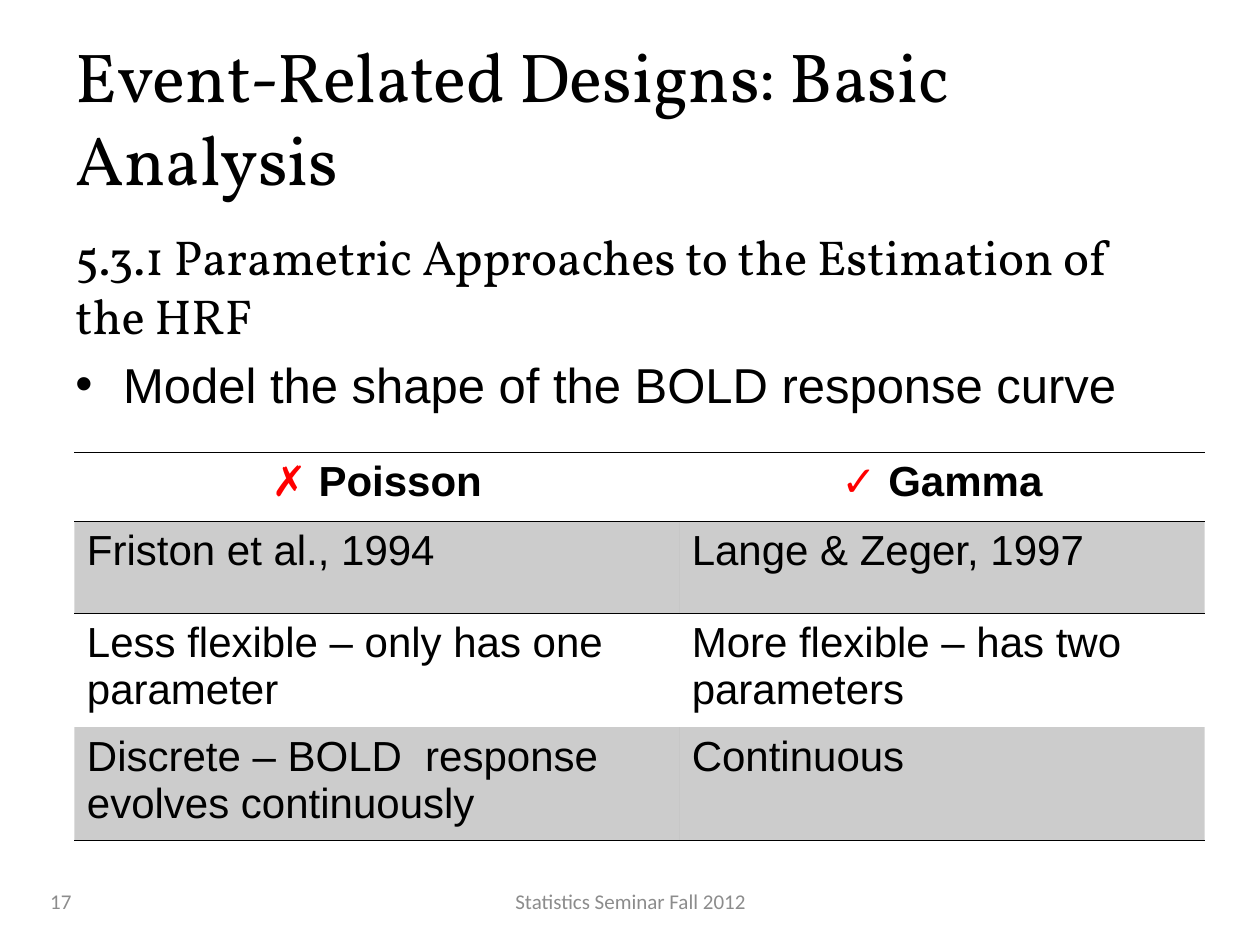
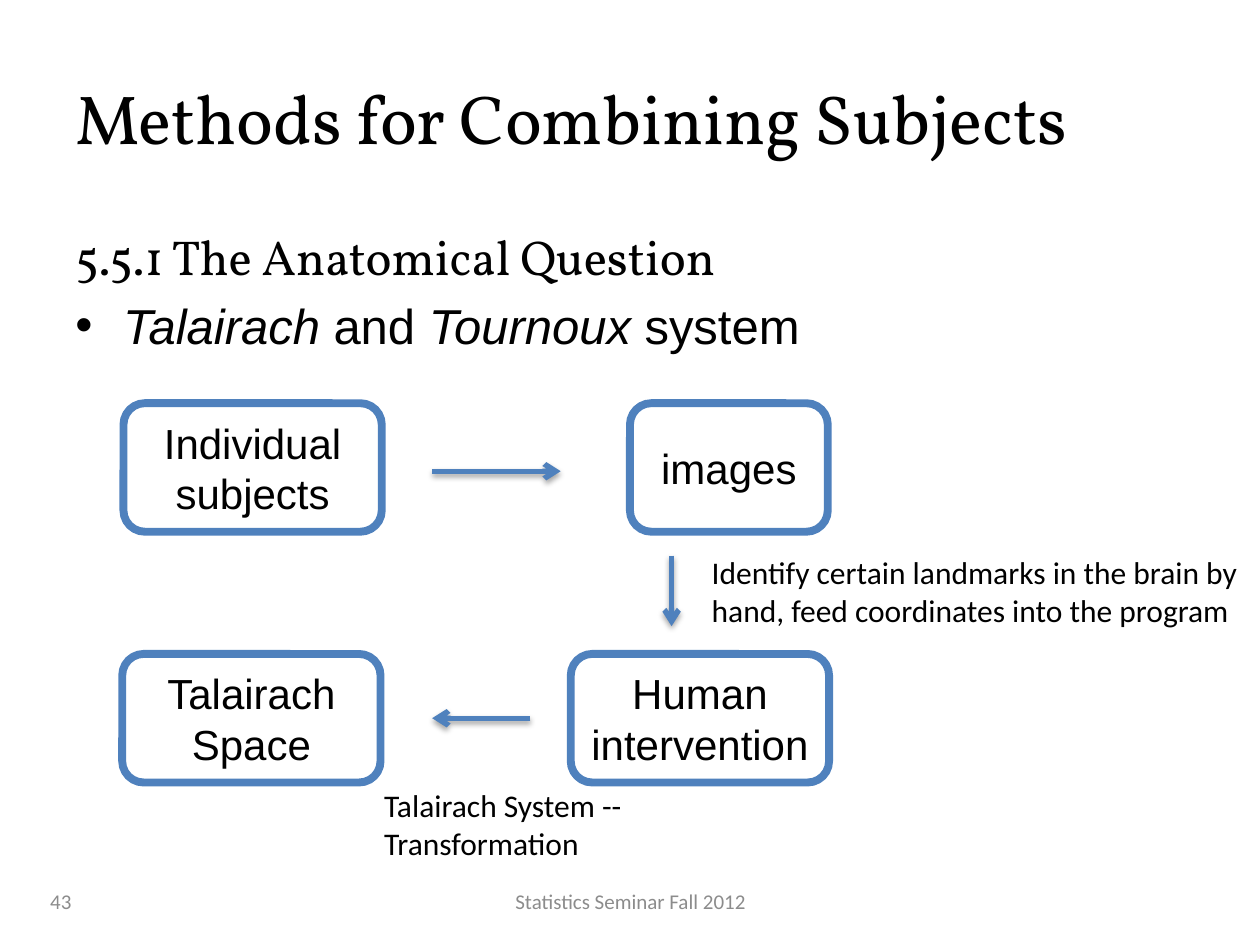
from lxml import etree
from pptx import Presentation
from pptx.dml.color import RGBColor
from pptx.enum.shapes import MSO_CONNECTOR, MSO_SHAPE
from pptx.enum.text import MSO_ANCHOR, PP_ALIGN
from pptx.oxml import parse_xml
from pptx.oxml.ns import nsdecls, qn
from pptx.util import Pt

PX = 9144
LEFT, CENTER = PP_ALIGN.LEFT, PP_ALIGN.CENTER
TOP, MIDDLE = MSO_ANCHOR.TOP, MSO_ANCHOR.MIDDLE
ROUND_RECT = MSO_SHAPE.ROUNDED_RECTANGLE
STRAIGHT = MSO_CONNECTOR.STRAIGHT
COLORS = {"ink": "000000", "paper": "FFFFFF", "footer": "8C8C8C", "mark": "FF0000", "blue": "4F81BD"}
HEADING, BODY, NOTE = "Vollkorn", "Arial", "Calibri"
NO_STYLE = "{2D5ABB26-0587-4C30-8999-92F81FD0307C}"


def add_run(p, text, size, font, color="ink", bold=False, italic=False):
    r = p.add_run()
    r.text = text
    r.font.size = Pt(size)
    r.font.name = font
    r.font.bold = bold
    r.font.italic = italic
    r.font.color.rgb = RGBColor.from_string(COLORS[color])


def add_box(s, box, text, size, font, color="ink", align=LEFT, anchor=TOP):
    tf = s.shapes.add_textbox(*[v * PX for v in box]).text_frame
    tf.word_wrap = True
    tf.vertical_anchor = anchor
    p = tf.paragraphs[0]
    p.alignment = align
    add_run(p, text, size, font, color)
    return tf


prs = Presentation()
prs.slide_width, prs.slide_height = 1000 * PX, 750 * PX

pages = [
    ("17", "Event-Related Designs: Basic Analysis",
     "5.3.1 Parametric Approaches to the Estimation of the HRF",
     [("Model the shape of the BOLD response curve", False)]),
    ("43", "Methods for Combining Subjects", "5.5.1 The Anatomical Question",
     [("Talairach", True), (" and ", False), ("Tournoux", True), (" system", False)]),
]
slides = []
for number, title, section, bullet in pages:
    s = prs.slides.add_slide(prs.slide_layouts[6])
    slides.append(s)
    add_box(s, (50, 30, 900, 125), title, 39.6, HEADING, anchor=MIDDLE)
    tf = add_box(s, (50, 175, 900, 495), section, 28, HEADING)
    p = tf.add_paragraph()
    p.space_before = Pt(5.6)
    pPr = p._p.get_or_add_pPr()
    pPr.set("marL", str(38 * PX))
    pPr.set("indent", str(-38 * PX))
    etree.SubElement(pPr, qn("a:buFont")).set("typeface", BODY)
    etree.SubElement(pPr, qn("a:buChar")).set("char", "•")
    for text, italic in bullet:
        add_run(p, text, 28, BODY, italic=italic)
    add_box(s, (342, 695, 317, 40), "Statistics Seminar Fall 2012", 12, NOTE, "footer", CENTER, MIDDLE)
    add_box(s, (30, 695, 233, 40), number, 12, NOTE, "footer", anchor=MIDDLE)

compare, flow = slides

rows = [
    ("✗ Poisson", "✓ Gamma"),
    ("Friston et al., 1994", "Lange & Zeger, 1997"),
    ("Less flexible – only has one parameter", "More flexible – has two parameters"),
    ("Discrete – BOLD  response evolves continuously", "Continuous"),
]
table = compare.shapes.add_table(4, 2, 59 * PX, 359 * PX, 897 * PX, 274 * PX).table
table.first_row = table.horz_banding = False
table._tbl.tblPr.find(qn("a:tableStyleId")).text = NO_STYLE
for column, width in zip(table.columns, (480, 417)):
    column.width = width * PX
for row, height in zip(table.rows, (55, 73, 73, 73)):
    row.height = height * PX
for i, row in enumerate(rows):
    for j, text in enumerate(row):
        cell = table.cell(i, j)
        p = cell.text_frame.paragraphs[0]
        if i == 0:
            p.alignment = CENTER
            add_run(p, text[:2], 24, BODY, "mark", bold=True)
            add_run(p, text[2:], 24, BODY, bold=True)
        else:
            add_run(p, text, 24, BODY)
        tcPr = cell._tc.get_or_add_tcPr()
        if i % 2:
            cell.fill.solid()
            cell.fill.fore_color.rgb = RGBColor.from_string(COLORS["ink"])
            etree.SubElement(tcPr.find(".//" + qn("a:srgbClr")), qn("a:alpha")).set("val", "20000")
        else:
            cell.fill.background()
        edges = {0: ("lnT", "lnB"), 1: ("lnT",), 3: ("lnB",)}.get(i, ())
        for k, edge in enumerate(edges):
            tcPr.insert(k, parse_xml(
                f'<a:{edge} {nsdecls("a")} w="12700"><a:solidFill>'
                f'<a:srgbClr val="{COLORS["ink"]}"/></a:solidFill></a:{edge}>'))

steps = [
    ("Individual subjects", 98, 320, 205),
    ("images", 500, 320, 157),
    ("Human intervention", 453, 519, 205),
    ("Talairach Space", 97, 519, 205),
]
for text, x, y, width in steps:
    sp = flow.shapes.add_shape(ROUND_RECT, x * PX, y * PX, width * PX, 102 * PX)
    sp.shadow.inherit = False
    sp.fill.solid()
    sp.fill.fore_color.rgb = RGBColor.from_string(COLORS["paper"])
    sp.line.color.rgb = RGBColor.from_string(COLORS["blue"])
    sp.line.width = Pt(4.5)
    tf = sp.text_frame
    tf.word_wrap = True
    tf.vertical_anchor = MIDDLE
    p = tf.paragraphs[0]
    p.alignment = CENTER
    add_run(p, text, 24, BODY)

for ends in [(343, 374, 445, 374), (533, 441, 533, 497), (421, 570, 343, 570)]:
    arrow = flow.shapes.add_connector(STRAIGHT, *[v * PX for v in ends])
    arrow.line.color.rgb = RGBColor.from_string(COLORS["blue"])
    arrow.line.width = Pt(3)
    etree.SubElement(arrow.line._get_or_add_ln(), qn("a:tailEnd")).set("type", "arrow")
    arrow._element.spPr.append(parse_xml(
        f'<a:effectLst {nsdecls("a")}><a:outerShdw blurRad="40000" dist="23000" dir="5400000" '
        f'rotWithShape="0"><a:srgbClr val="{COLORS["ink"]}"><a:alpha val="35000"/></a:srgbClr>'
        '</a:outerShdw></a:effectLst>'))

add_box(flow, (555, 434, 445, 71),
        "Identify certain landmarks in the brain by hand, feed coordinates into the program", 18, NOTE)
add_box(flow, (295, 619, 222, 71), "Talairach System -- Transformation", 18, NOTE)

prs.save("out.pptx")
